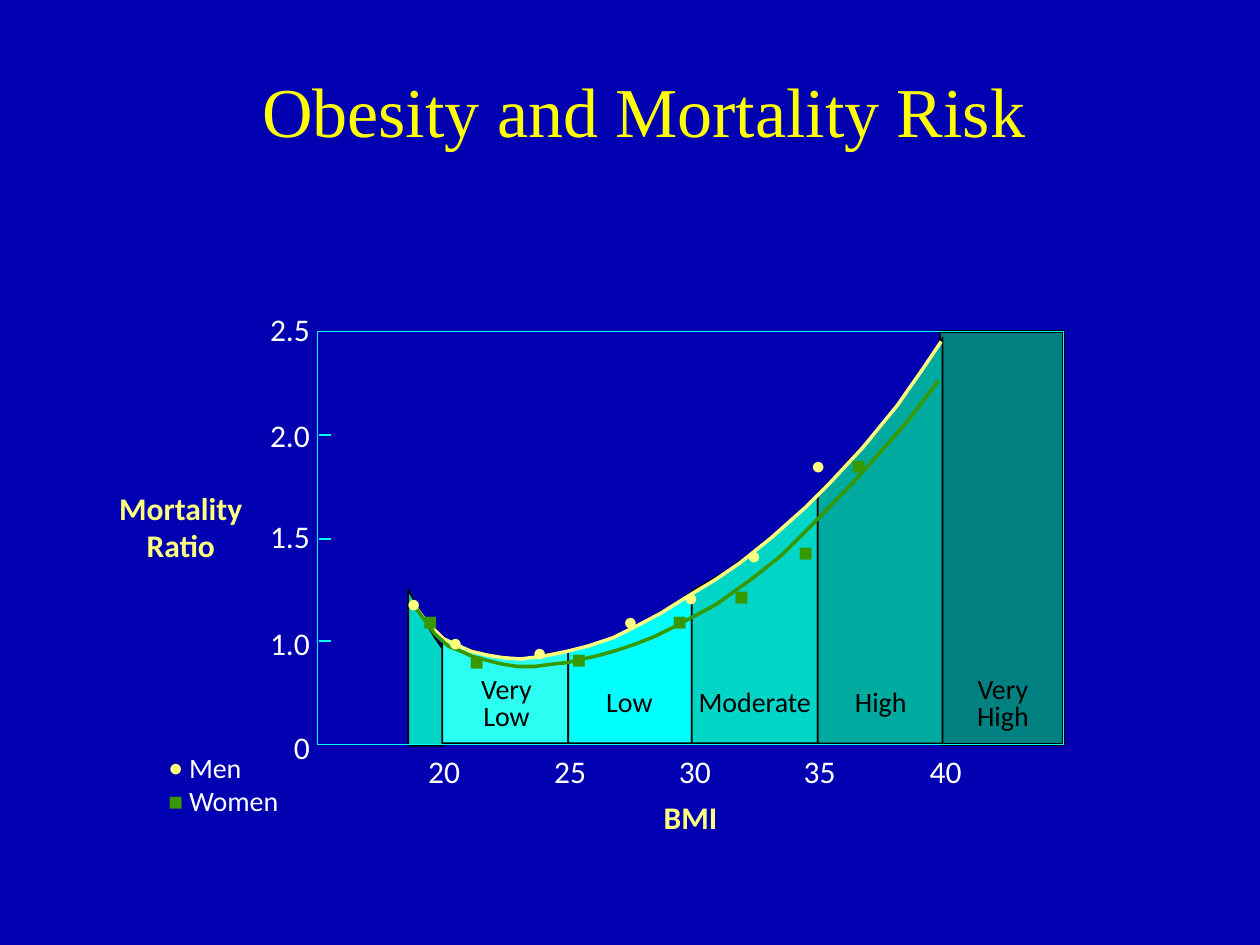
from dataclasses import dataclass

from lxml import etree
from pptx import Presentation
from pptx import util as u
from pptx.dml.color import RGBColor
from pptx.enum import shapes, text
from pptx.oxml.ns import qn

PX = 9144  # one px is a hundredth of an inch
LEFT, CENTER, RIGHT = text.PP_ALIGN.LEFT, text.PP_ALIGN.CENTER, text.PP_ALIGN.RIGHT


@dataclass(frozen=True)
class Theme:
    background: str = "0000B0"
    title: str = "FFFF00"
    axis: str = "00FFFF"
    label: str = "FFFFFF"
    men: str = "FFFF80"
    women: str = "379901"
    ink: str = "000000"
    very_low: str = "2AFFF1"
    low: str = "00FFFF"
    moderate: str = "00D5C6"
    high: str = "00AA9E"
    very_high: str = "008080"
    title_font: str = "Times New Roman"
    body_font: str = "Calibri"
    marker_font: str = "Arial"
    title_size: int = 40
    axis_size: int = 18
    band_size: int = 16
    marker_size: int = 14


class Canvas:
    def __init__(self, presentation, theme):
        self.theme = theme
        self.slide = presentation.slides.add_slide(presentation.slide_layouts[5])
        self.paint(self.slide.background.fill, theme.background)

    def paint(self, fill, color):
        if color is None:
            fill.background()
        else:
            fill.solid()
            fill.fore_color.rgb = RGBColor.from_string(color)

    def outline(self, shape, color, width):
        shape.line.color.rgb = RGBColor.from_string(color)
        shape.line.width = u.Pt(width)

    def font(self, paragraph, name, size, color, bold=False):
        paragraph.font.name = name
        paragraph.font.size = u.Pt(size)
        paragraph.font.bold = bold
        paragraph.font.color.rgb = RGBColor.from_string(color)

    def title(self, words, left, top, width, height):
        shape = self.slide.shapes.title
        shape.left, shape.top = left * PX, top * PX
        shape.width, shape.height = width * PX, height * PX
        frame = shape.text_frame
        frame.text = words
        frame.vertical_anchor = text.MSO_ANCHOR.MIDDLE
        paragraph = frame.paragraphs[0]
        paragraph.alignment = CENTER
        paragraph.line_spacing = 0.9
        self.font(paragraph, self.theme.title_font, self.theme.title_size, self.theme.title)

    def rectangle(self, left, top, width, height, fill, line, weight):
        shape = self.slide.shapes.add_shape(
            shapes.MSO_SHAPE.RECTANGLE, left * PX, top * PX, width * PX, height * PX)
        shape.shadow.inherit = False
        self.paint(shape.fill, fill)
        self.outline(shape, line, weight)

    def freeform(self, points, fill, line, weight):
        builder = self.slide.shapes.build_freeform(*points[0], scale=PX)
        builder.add_line_segments(points[1:], close=fill is not None)
        shape = builder.convert_to_shape()
        shape.shadow.inherit = False
        self.paint(shape.fill, fill)
        self.outline(shape, line, weight)

    def line(self, x1, y1, x2, y2, color):
        connector = self.slide.shapes.add_connector(
            shapes.MSO_CONNECTOR.STRAIGHT, x1 * PX, y1 * PX, x2 * PX, y2 * PX)
        self.outline(connector, color, 1)
        etree.SubElement(connector._element.spPr, qn("a:effectLst"))

    def label(self, words, left, top, width, height, size, color,
              leading, align=CENTER, bold=False, font=None):
        box = self.slide.shapes.add_textbox(left * PX, top * PX, width * PX, height * PX)
        frame = box.text_frame
        frame.word_wrap = False
        frame.margin_left = frame.margin_right = 2 * PX
        frame.margin_top = frame.margin_bottom = 3 * PX
        frame.text = words
        paragraph = frame.paragraphs[0]
        paragraph.alignment = align
        paragraph.line_spacing = u.Pt(leading)
        self.font(paragraph, font or self.theme.body_font, size, color, bold)

    def axis_label(self, words, left, top, width, height=44, align=CENTER, heading=False):
        color = self.theme.men if heading else self.theme.label
        self.label(words, left, top, width, height, self.theme.axis_size,
                   color, 21, align, heading)

    def markers(self, symbol, color, corners):
        for left, top in corners:
            self.label(symbol, left, top, 25, 37, self.theme.marker_size,
                       color, 16, font=self.theme.marker_font)


def main():
    theme = Theme()
    presentation = Presentation()
    presentation.slide_width, presentation.slide_height = 1000 * PX, 750 * PX
    canvas = Canvas(presentation, theme)
    canvas.title("Obesity and Mortality Risk", 89, 48, 844, 86)

    # Risk bands: left, right, base, colour, upper edge from right to left
    bands = [
        (324, 352, 592, theme.moderate,
         [(352, 516), (345, 506), (338, 494), (331, 481), (324, 468)]),
        (351, 451, 590, theme.very_low,
         [(451, 517), (439, 518), (425, 521), (413, 523), (397, 521), (380, 518),
          (368, 514), (351, 507)]),
        (451, 549, 590, theme.low,
         [(549, 470), (534, 480), (511, 494), (483, 507), (462, 514), (451, 516)]),
        (549, 649, 590, theme.moderate,
         [(649, 393), (626, 414), (601, 435), (577, 453), (549, 469)]),
        (649, 748, 590, theme.high,
         [(748, 268), (738, 285), (724, 305), (709, 326), (694, 345), (675, 364),
          (660, 381), (649, 391)]),
    ]
    canvas.rectangle(746, 263, 98, 328, theme.very_high, theme.ink, 1.38)
    for left, right, base, color, edge in bands:
        canvas.freeform([(left, base), (right, base), *edge], color, theme.ink, 1)

    # Fitted curves
    men_curve = [
        (327, 478), (339, 494), (352, 507), (365, 513), (374, 517), (387, 520),
        (399, 522), (413, 523), (430, 521), (450, 517), (466, 513), (487, 506),
        (505, 497), (524, 487), (548, 472), (568, 460), (587, 447), (612, 427),
        (639, 403), (659, 383), (685, 355), (712, 322), (733, 292), (747, 271)]
    women_curve = [
        (326, 477), (345, 503), (356, 513), (366, 517), (375, 521), (386, 524),
        (398, 527), (411, 529), (424, 529), (439, 527), (450, 526), (476, 520),
        (490, 516), (505, 511), (520, 505), (536, 497), (568, 480), (596, 460),
        (620, 441), (646, 415), (679, 381), (719, 336), (745, 302)]
    canvas.freeform(men_curve, None, theme.men, 2)
    canvas.freeform(women_curve, None, theme.women, 2)

    # Observed points, the last of each being its legend key
    canvas.markers("●", theme.men, [
        (316, 465), (349, 496), (416, 504), (488, 479), (536, 460), (586, 427),
        (637, 355), (127, 595)])
    canvas.markers("■", theme.women, [
        (329, 479), (366, 511), (447, 509), (527, 479), (576, 459), (627, 424),
        (669, 355), (127, 622)])
    canvas.label("Men\vWomen", 148, 593, 92, 68, theme.band_size, theme.label, 19, LEFT)

    # Axis labels and headings
    for words, top in [("2.5", 244), ("2.0", 328), ("1.5", 408), ("1.0", 493), ("0", 576)]:
        canvas.axis_label(words, 174, top, 74, align=RIGHT)
    for step in range(5):
        canvas.axis_label(str(20 + 5 * step), 315 + round(99.5 * step), 595, 75)
    canvas.axis_label("BMI", 329, 631, 438, heading=True)
    canvas.axis_label("Mortality\vRatio", 80, 386, 127, 73, heading=True)

    # Band names
    for words, left, top, width, height in [
            ("Very\vLow", 360, 534, 84, 59), ("Low", 460, 545, 79, 37),
            ("Moderate", 545, 545, 108, 37), ("High", 657, 545, 84, 37),
            ("Very\vHigh", 754, 534, 84, 59)]:
        canvas.label(words, left, top, width, height, theme.band_size, theme.ink, 16)

    # Axis ticks and plot frame
    for y in (345, 428, 509):
        canvas.line(253, y, 263, y, theme.axis)
    canvas.rectangle(252, 263, 592, 328, None, theme.axis, 1)

    presentation.save("out.pptx")


if __name__ == "__main__":
    main()
